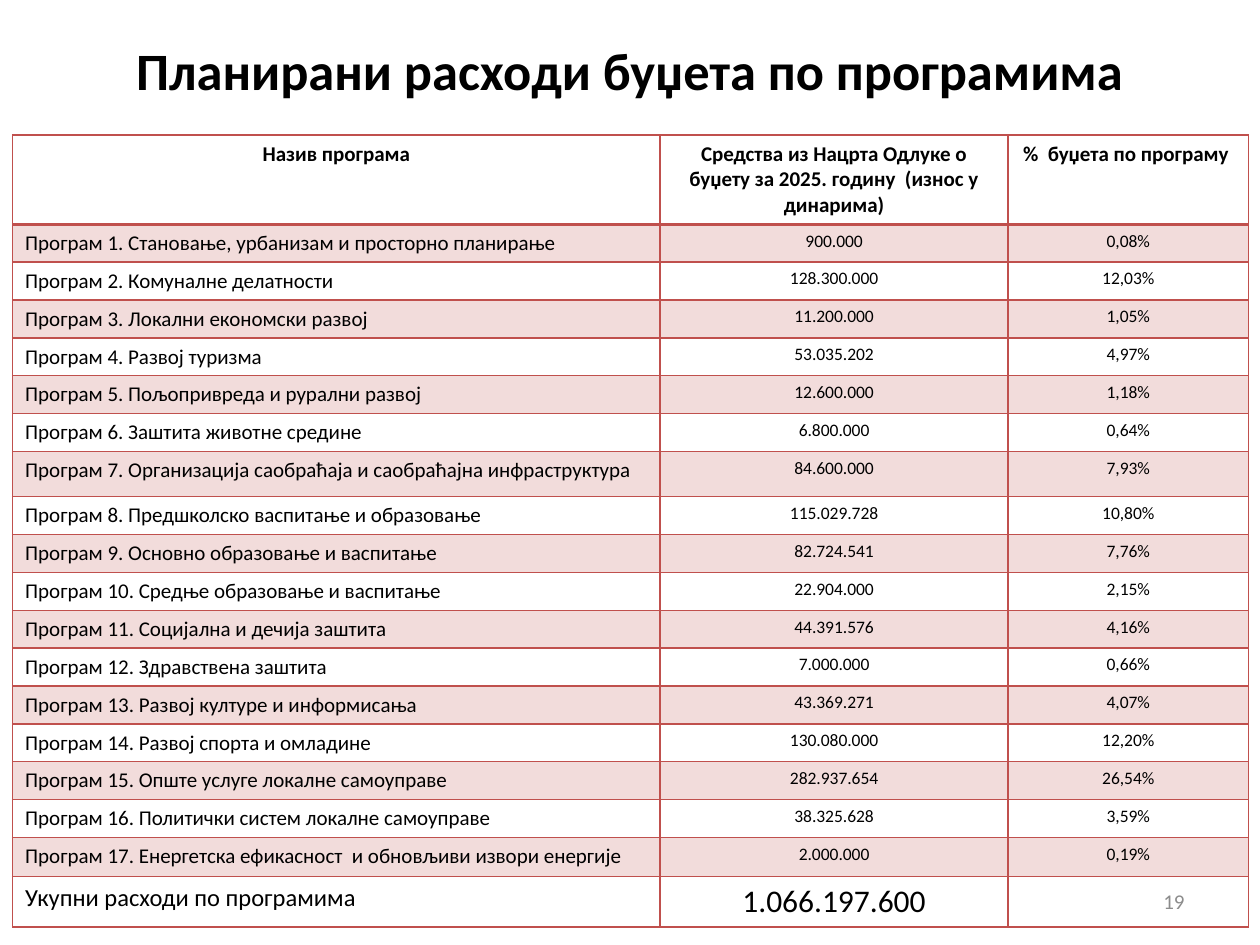
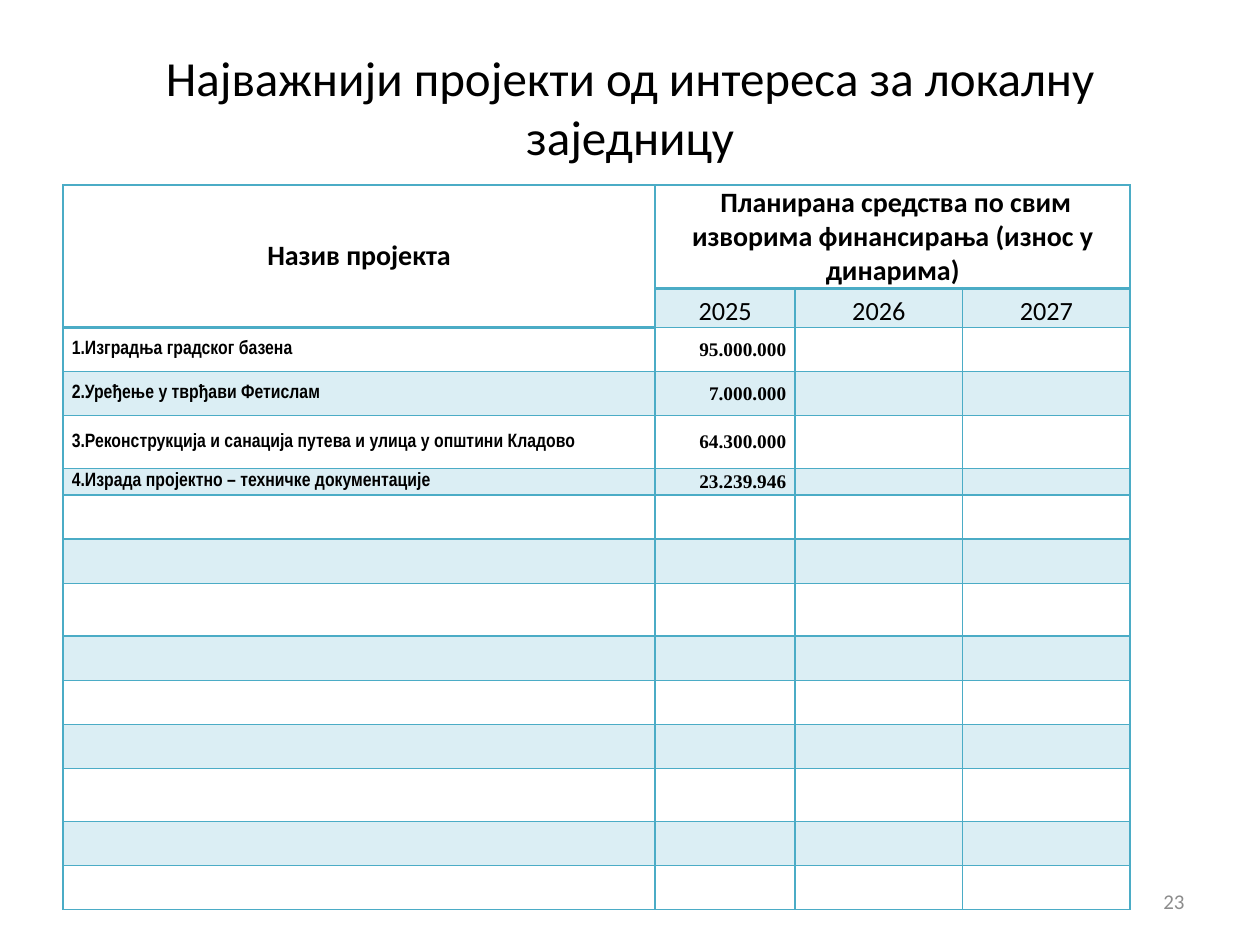
from lxml.etree import SubElement
from pptx import Presentation
from pptx.dml.color import RGBColor
from pptx.enum.text import MSO_ANCHOR as Anchor, MSO_AUTO_SIZE as AutoSize, PP_ALIGN as Align
from pptx.oxml.ns import qn
from pptx.util import Inches, Pt

COLORS = {
    "text": "000000", "number": "8C8C8C",
    "red": "C0504D", "red_band": "F2DCDB",
    "teal": "4BACC6", "teal_band": "DBEEF4",
}
FONT = "Calibri"
PLAIN_TABLE = "{2D5ABB26-0587-4C30-8999-92F81FD0307C}"

PROGRAMS = [
    ("Становање, урбанизам и просторно планирање", "900.000", "0,08%"),
    ("Комуналне делатности", "128.300.000", "12,03%"),
    ("Локални економски развој", "11.200.000", "1,05%"),
    ("Развој туризма", "53.035.202", "4,97%"),
    ("Пољопривреда и рурални развој", "12.600.000", "1,18%"),
    ("Заштита животне средине", "6.800.000", "0,64%"),
    ("Организација саобраћаја и саобраћајна инфраструктура", "84.600.000", "7,93%"),
    ("Предшколско васпитање и образовање", "115.029.728", "10,80%"),
    ("Основно образовање и васпитање", "82.724.541", "7,76%"),
    ("Средње образовање и васпитање", "22.904.000", "2,15%"),
    ("Социјална и дечија заштита", "44.391.576", "4,16%"),
    ("Здравствена заштита", "7.000.000", "0,66%"),
    ("Развој културе и информисања", "43.369.271", "4,07%"),
    ("Развој спорта и омладине", "130.080.000", "12,20%"),
    ("Опште услуге локалне самоуправе", "282.937.654", "26,54%"),
    ("Политички систем локалне самоуправе", "38.325.628", "3,59%"),
    ("Енергетска ефикасност  и обновљиви извори енергије", "2.000.000", "0,19%"),
]
PROJECTS = [
    ("Изградња градског базена", "95.000.000"),
    ("Уређење у тврђави Фетислам", "7.000.000"),
    ("Реконструкција и санација путева и улица у општини Кладово", "64.300.000"),
    ("Израда пројектно – техничке документације", "23.239.946"),
]


class BudgetDeck:
    """Holds the shared style and the current slide."""

    def __init__(self):
        self.presentation = Presentation()
        self.presentation.slide_width = Inches(10)
        self.presentation.slide_height = Inches(7.5)
        self.slide = None

    def add_slide(self, title, box, size, number, bold=False):
        self.slide = self.presentation.slides.add_slide(self.presentation.slide_layouts[5])
        shape = self.slide.shapes.title
        shape.left, shape.top, shape.width, shape.height = map(Inches, box)
        shape.text_frame.auto_size = AutoSize.NONE
        shape.text_frame.vertical_anchor = Anchor.MIDDLE
        self.set_text(shape.text_frame, title, size, bold, Align.CENTER)
        self.add_number(number)

    def add_number(self, number):
        shape = self.slide.shapes.add_textbox(Inches(7.17), Inches(6.95), Inches(2.33), Inches(0.4))
        shape.text_frame.word_wrap = True
        shape.text_frame.vertical_anchor = Anchor.MIDDLE
        self.set_text(shape.text_frame, str(number), 12, align=Align.RIGHT, color="number")

    def set_text(self, text_frame, text, size, bold=False, align=Align.LEFT, font=FONT, color="text"):
        text_frame.text = text
        paragraph = text_frame.paragraphs[0]
        paragraph.alignment = align
        for run in paragraph.runs:
            run.font.name = font
            run.font.size = Pt(size)
            run.font.bold = bold
            run.font.color.rgb = RGBColor.from_string(COLORS[color])
        if not text:
            SubElement(paragraph._p, qn("a:endParaRPr"), sz=str(size * 100))

    def add_table(self, left, top, widths, heights, accent, first_band):
        frame = self.slide.shapes.add_table(
            len(heights), len(widths), Inches(left), Inches(top),
            Inches(sum(widths)), Inches(sum(heights)))
        table = frame.table
        table.first_row = table.horz_banding = False
        table._tbl.tblPr.find(qn("a:tableStyleId")).text = PLAIN_TABLE
        for column, width in zip(table.columns, widths):
            column.width = Inches(width)
        for index, height in enumerate(heights):
            table.rows[index].height = Inches(height)
            banded = index >= first_band and (index - first_band) % 2 == 0
            for position in range(len(widths)):
                cell = table.cell(index, position)
                self.add_borders(cell, accent, index, position)
                if banded:
                    cell.fill.solid()
                    cell.fill.fore_color.rgb = RGBColor.from_string(COLORS[accent + "_band"])
                else:
                    cell.fill.background()
        return table

    def add_borders(self, cell, accent, row, column):
        widths = {"lnL": 1 if column == 0 else 0, "lnR": 1,
                  "lnT": 1 if row == 0 else 0, "lnB": 2 if row == 0 else 1}
        properties = cell._tc.get_or_add_tcPr()
        for side, width in widths.items():
            if width:
                line = SubElement(properties, qn("a:" + side), w=str(Pt(width)))
                fill = SubElement(line, qn("a:solidFill"))
                SubElement(fill, qn("a:srgbClr"), val=COLORS[accent])

    def set_cell(self, cell, text, size, bold=False, align=Align.LEFT, font=FONT):
        self.set_text(cell.text_frame, text, size, bold, align, font)

    def set_tight_cell(self, cell, *text_style, anchor=Anchor.MIDDLE):
        cell.margin_left = cell.margin_right = Inches(0.07)
        cell.margin_top = cell.margin_bottom = 0
        cell.vertical_anchor = anchor
        self.set_cell(cell, *text_style)


def add_programs(deck):
    deck.add_slide("Планирани расходи буџета по програмима", (0.74, 0.13, 8.52, 0.85), 30, 19, True)
    heights = [0.71] + [0.3] * 6 + [0.36] + [0.3] * 9 + [0.31, 0.4]
    table = deck.add_table(0.1, 1.07, [5.14, 2.76, 1.91], heights, "red", 1)
    headers = ["Назив програма",
               "Средства из Нацрта Одлуке о буџету за 2025. годину  (износ у динарима)",
               "%  буџета по програму "]
    for column, header in enumerate(headers):
        deck.set_cell(table.cell(0, column), header, 12, True, Align.CENTER)
    for row, (name, amount, share) in enumerate(PROGRAMS, 1):
        deck.set_cell(table.cell(row, 0), f"Програм {row}. {name}", 12)
        deck.set_cell(table.cell(row, 1), amount, 10, align=Align.CENTER)
        deck.set_cell(table.cell(row, 2), share, 10, align=Align.CENTER)
    total = len(PROGRAMS) + 1
    deck.set_cell(table.cell(total, 0), "Укупни расходи по програмима", 14)
    deck.set_cell(table.cell(total, 1), "1.066.197.600", 18, align=Align.CENTER)
    deck.set_cell(table.cell(total, 2), "", 12)


def add_projects(deck):
    deck.add_slide("Најважнији пројекти од интереса за локалну заједницу", (0.5, 0.3, 9, 1.09), 28, 23)
    heights = [0.82, 0.31, 0.35, 0.35, 0.42, 0.21] + [0.35, 0.35, 0.42, 0.35] * 2 + [0.35]
    table = deck.add_table(0.5, 1.47, [4.7, 1.11, 1.33, 1.33], heights, "teal", 1)
    table.cell(0, 0).merge(table.cell(1, 0))
    table.cell(0, 1).merge(table.cell(0, 3))
    table.cell(1, 0).fill.background()
    deck.set_tight_cell(table.cell(0, 0), "Назив пројекта", 16, True, Align.CENTER)
    deck.set_tight_cell(table.cell(0, 1),
                        " Планирана средства по свим изворима финансирања (износ у динарима)",
                        16, True, Align.CENTER, anchor=Anchor.BOTTOM)
    for column, year in enumerate((2025, 2026, 2027), 1):
        deck.set_tight_cell(table.cell(1, column), str(year), 15, False, Align.CENTER, anchor=Anchor.BOTTOM)
    for row in range(2, len(heights)):
        for column in range(4):
            deck.set_tight_cell(table.cell(row, column), "", 11)
    for number, (name, amount) in enumerate(PROJECTS, 1):
        row = number + 1
        deck.set_tight_cell(table.cell(row, 0), f"{number}.{name}", 11, True, Align.LEFT, "Arial Narrow")
        deck.set_tight_cell(table.cell(row, 1), amount, 11, True, Align.RIGHT, "Times New Roman")


def main():
    deck = BudgetDeck()
    add_programs(deck)
    add_projects(deck)
    deck.presentation.save("out.pptx")


if __name__ == "__main__":
    main()
